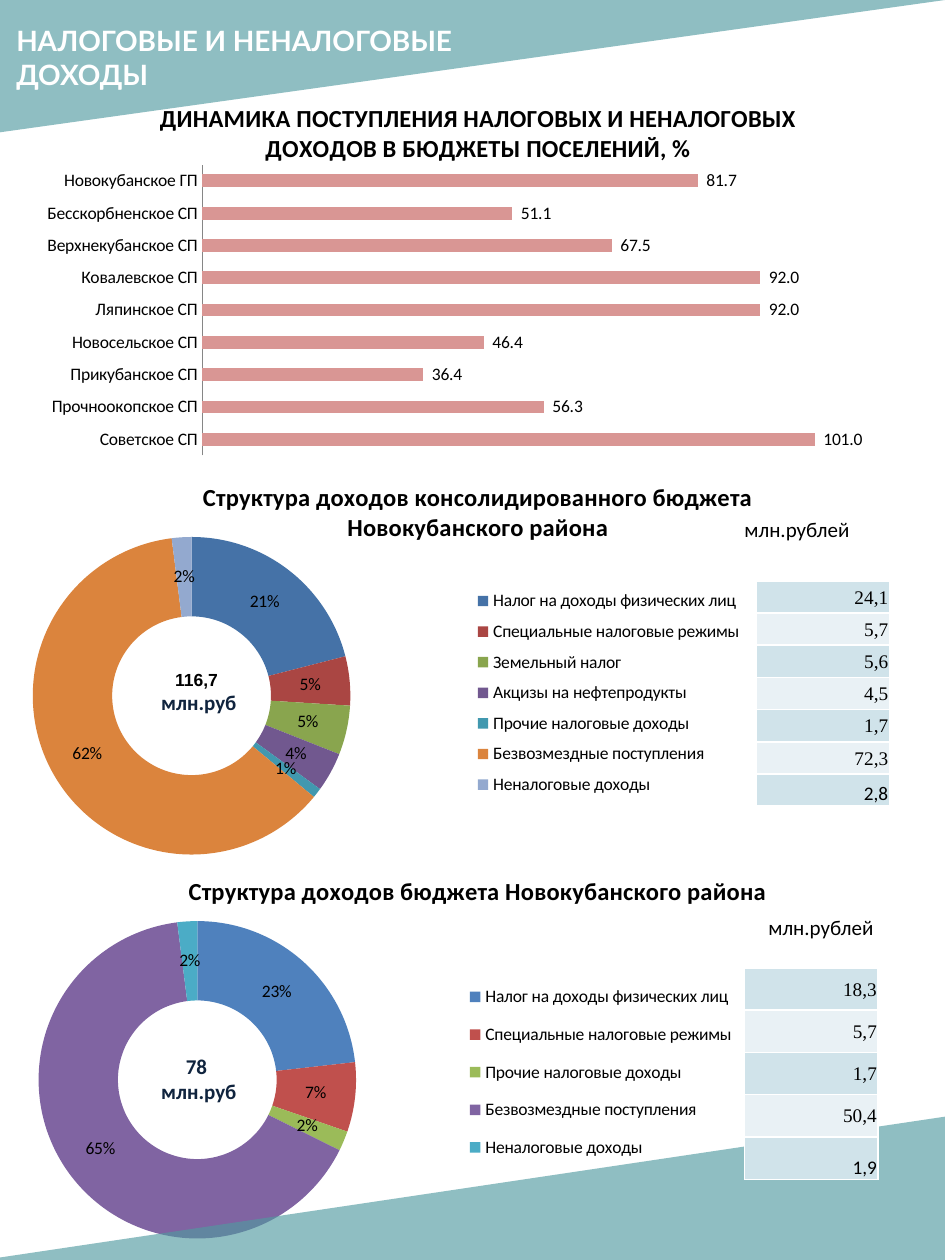
"""Build the one-page slide on tax and non-tax revenues."""
from dataclasses import dataclass

from lxml.etree import SubElement
from pptx import Presentation
from pptx.chart.data import CategoryChartData
from pptx.dml.color import RGBColor as RGB
from pptx.enum.chart import XL_CHART_TYPE as ChartKind
from pptx.enum.chart import XL_LABEL_POSITION as LabelPosition
from pptx.enum.chart import XL_TICK_MARK as TickMark
from pptx.enum.shapes import MSO_SHAPE as Preset
from pptx.enum.text import MSO_ANCHOR as Anchor
from pptx.enum.text import MSO_AUTO_SIZE as AutoSize
from pptx.enum.text import PP_ALIGN as Align
from pptx.oxml.ns import qn
from pptx.oxml.xmlchemy import OxmlElement
from pptx.util import Pt


@dataclass(frozen=True)
class Theme:
    """Colours, fonts and type sizes of the slide."""
    black: str = "000000"
    white: str = "FFFFFF"
    navy: str = "10243E"
    teal: str = "519AA0"
    bar: str = "D99694"
    axis: str = "868686"
    bands: tuple = ("D0E3EA", "E9F1F5")
    district: tuple = ("4F81BD", "C0504D", "9BBB59", "8064A2", "4BACC6")
    consolidated: tuple = ("4572A7", "AA4643", "89A54E", "71588F", "4198AF", "DB843D", "93A9CF")
    body: str = "Calibri"
    heading: str = "Lato"
    plain: str = "Arial"
    figures: str = "Times New Roman"
    small: int = 10
    cell: int = 11
    note: int = 12
    chart_title: int = 14
    header: int = 16


class Painter:
    """Draws styled elements on the current slide."""

    def __init__(self, slide, theme):
        self.shapes = slide.shapes
        self.theme = theme

    def style(self, font, size, color, name, bold=False):
        font.size, font.name, font.bold = Pt(size), name, bold
        font.color.rgb = RGB.from_string(color)

    def paint(self, fill, color):
        fill.solid()
        fill.fore_color.rgb = RGB.from_string(color)

    def triangle(self, box, flip):
        shape = self.shapes.add_shape(Preset.RIGHT_TRIANGLE, *map(Pt, box))
        shape.shadow.inherit = False
        shape.rotation = 180
        shape.element.spPr.find(qn("a:xfrm")).set(flip, "1")
        self.paint(shape.fill, self.theme.teal)
        shape.line.fill.background()
        color = shape.element.spPr.find(f"{qn('a:solidFill')}/{qn('a:srgbClr')}")
        SubElement(color, qn("a:alpha"), val="64000")

    def text(self, box, lines, align=Align.LEFT):
        frame = self.shapes.add_textbox(*map(Pt, box)).text_frame
        frame.word_wrap = True
        frame.auto_size = AutoSize.SHAPE_TO_FIT_TEXT
        frame.text = "\n".join(words for words, *_ in lines)
        for para, (_, *look) in zip(frame.paragraphs, lines):
            para.alignment = align
            self.style(para.runs[0].font, *look)

    def table(self, box, values):
        theme = self.theme
        grid = self.shapes.add_table(len(values), 1, *map(Pt, box)).table
        grid.first_row = grid.horz_banding = False
        for index, value in enumerate(values):
            last = index == len(values) - 1
            grid.rows[index].height = Pt(box[3] / len(values))
            cell = grid.cell(index, 0)
            cell.margin_left = cell.margin_right = cell.margin_top = Pt(0.72)
            cell.margin_bottom = 0
            cell.vertical_anchor = Anchor.BOTTOM if last else Anchor.MIDDLE
            cell.text_frame.text = value
            para = cell.text_frame.paragraphs[0]
            para.alignment = Align.RIGHT
            self.style(para.runs[0].font, theme.cell, theme.black,
                       theme.body if last else theme.figures)
            for side in ("lnL", "lnR", "lnT", "lnB"):
                line = SubElement(cell._tc.get_or_add_tcPr(), qn(f"a:{side}"), w="12700")
                fill = SubElement(line, qn("a:solidFill"))
                SubElement(fill, qn("a:srgbClr"), val=theme.white)
            self.paint(cell.fill, theme.bands[index % 2])

    def place(self, chart, part, **places):
        parent = chart._chartSpace.xpath(f".//c:{part}")[0]
        for old in parent.findall(qn("c:layout")):
            parent.remove(old)
        layout = OxmlElement("c:layout")
        manual = SubElement(layout, qn("c:manualLayout"))
        if part == "plotArea":
            SubElement(manual, qn("c:layoutTarget"), val="inner")
        for key in "xy":
            SubElement(manual, qn(f"c:{key}Mode"), val="edge")
        for key, value in places.items():
            SubElement(manual, qn(f"c:{key}"), val=str(value))
        parent.insert(0 if part == "plotArea" else 1, layout)

    def chart(self, kind, box, title, data, title_at, plot_at, label_format):
        theme = self.theme
        source = CategoryChartData()
        source.categories = list(data)
        source.add_series("Series 1", list(data.values()))
        chart = self.shapes.add_chart(kind, *map(Pt, box), source).chart
        self.style(chart.font, theme.small, theme.black, theme.body)
        chart.has_legend = False
        chart.has_title = True
        chart.chart_title.text_frame.text = title
        span = chart.chart_title.text_frame.paragraphs[0].runs[0]
        self.style(span.font, theme.chart_title, theme.black, theme.body, True)
        self.place(chart, "title", **dict(zip("xy", title_at)))
        self.place(chart, "plotArea", **dict(zip("xywh", plot_at)))
        plot = chart.plots[0]
        plot.has_data_labels = True
        labels = plot.data_labels
        self.style(labels.font, theme.small, theme.black, theme.body)
        labels.show_value, labels.show_percentage = True, False
        labels.number_format, labels.number_format_is_linked = label_format, False
        return chart, plot

    def bars(self, *args):
        chart, plot = self.chart(ChartKind.BAR_CLUSTERED, *args, "#\\ ##0.0")
        plot.gap_width, plot.overlap, plot.vary_by_categories = 150, -25, False
        self.paint(plot.series[0].format.fill, self.theme.bar)
        plot.data_labels.position = LabelPosition.OUTSIDE_END
        names, values = chart.category_axis, chart.value_axis
        names.reverse_order = True
        names.major_tick_mark = TickMark.NONE
        names.format.line.color.rgb = RGB.from_string(self.theme.axis)
        values.minimum_scale, values.maximum_scale = 0, 120
        values.has_major_gridlines = values.visible = False

    def doughnut(self, colors, legend_at, *args):
        chart, plot = self.chart(ChartKind.DOUGHNUT, *args, '0"%"')
        plot.vary_by_categories = True
        for index, color in enumerate(colors):
            self.paint(plot.series[0].points[index].format.fill, color)
        chart.has_legend = True
        chart.legend.include_in_layout = False
        self.style(chart.legend.font, self.theme.small, self.theme.black, self.theme.body)
        self.place(chart, "legend", **dict(zip("xywh", legend_at)))


def main():
    """Compose the slide and save it."""
    deck = Presentation()
    deck.slide_width, deck.slide_height = Pt(540), Pt(720)
    theme = Theme()
    page = Painter(deck.slides.add_slide(deck.slide_layouts[6]), theme)
    income, special, land, excise, other, grants, non_tax = (
        "Налог на доходы физических лиц", "Специальные налоговые режимы", "Земельный налог",
        "Акцизы на нефтепродукты", "Прочие налоговые доходы", "Безвозмездные поступления",
        "Неналоговые доходы")
    page.doughnut(theme.district, (0.52, 0.28, 0.33, 0.52), (0, 490.3, 501.1, 226.8),
                  "Структура доходов бюджета Новокубанского района",
                  {income: 23, special: 7, other: 2, grants: 65, non_tax: 2},
                  (0.21, 0.03), (0.044, 0.159, 0.362, 0.8))
    page.doughnut(theme.consolidated, (0.54, 0.29, 0.33, 0.56), (0, 265, 493.2, 229.7),
                  "Структура доходов консолидированного бюджета Новокубанского района",
                  {income: 21, special: 5, land: 5, excise: 4, other: 1, grants: 62, non_tax: 2},
                  (0.23, 0.03), (0.038, 0.171, 0.368, 0.813))
    page.triangle((0, 0, 540, 75.6), "flipH")
    page.triangle((-9.4, 637.9, 550.8, 82.1), "flipV")
    page.text((2.2, 10.1, 324.7, 45.4), [
        ("НАЛОГОВЫЕ И НЕНАЛОГОВЫЕ ДОХОДЫ", theme.header, theme.white, theme.heading, True)])
    unit = (" млн.руб", theme.note, theme.navy, theme.body, True)
    page.text((80.6, 598.3, 63.4, 36),
              [("78", theme.note, theme.navy, theme.body, True), unit], Align.CENTER)
    for left, top in ((418.3, 291.6), (432, 519.1)):
        page.text((left, top, 80, 21.6),
                  [("млн.рублей", theme.note, theme.black, theme.body)])
    page.text((80.6, 378.7, 63.4, 33.8),
              [("116,7", theme.small, theme.black, theme.plain, True), unit], Align.CENTER)
    page.table((432, 331.9, 76.3, 128.9), ["24,1", "5,7", "5,6", "4,5", "1,7", "72,3", "2,8"])
    page.table((425.5, 553, 76.3, 121), ["18,3", "5,7", "1,7", "50,4", "1,9"])
    page.bars((2.9, 46.1, 537.1, 223.2),
              "ДИНАМИКА ПОСТУПЛЕНИЯ НАЛОГОВЫХ И НЕНАЛОГОВЫХ ДОХОДОВ В БЮДЖЕТЫ ПОСЕЛЕНИЙ, %",
              {"Новокубанское ГП": 81.7, "Бесскорбненское СП": 51.1, "Верхнекубанское СП": 67.5,
               "Ковалевское СП": 92, "Ляпинское СП": 92, "Новосельское СП": 46.4,
               "Прикубанское СП": 36.4, "Прочноокопское СП": 56.3, "Советское СП": 101},
              (0.16, 0.04), (0.21, 0.215, 0.774, 0.745))
    deck.save("out.pptx")


if __name__ == "__main__":
    main()
